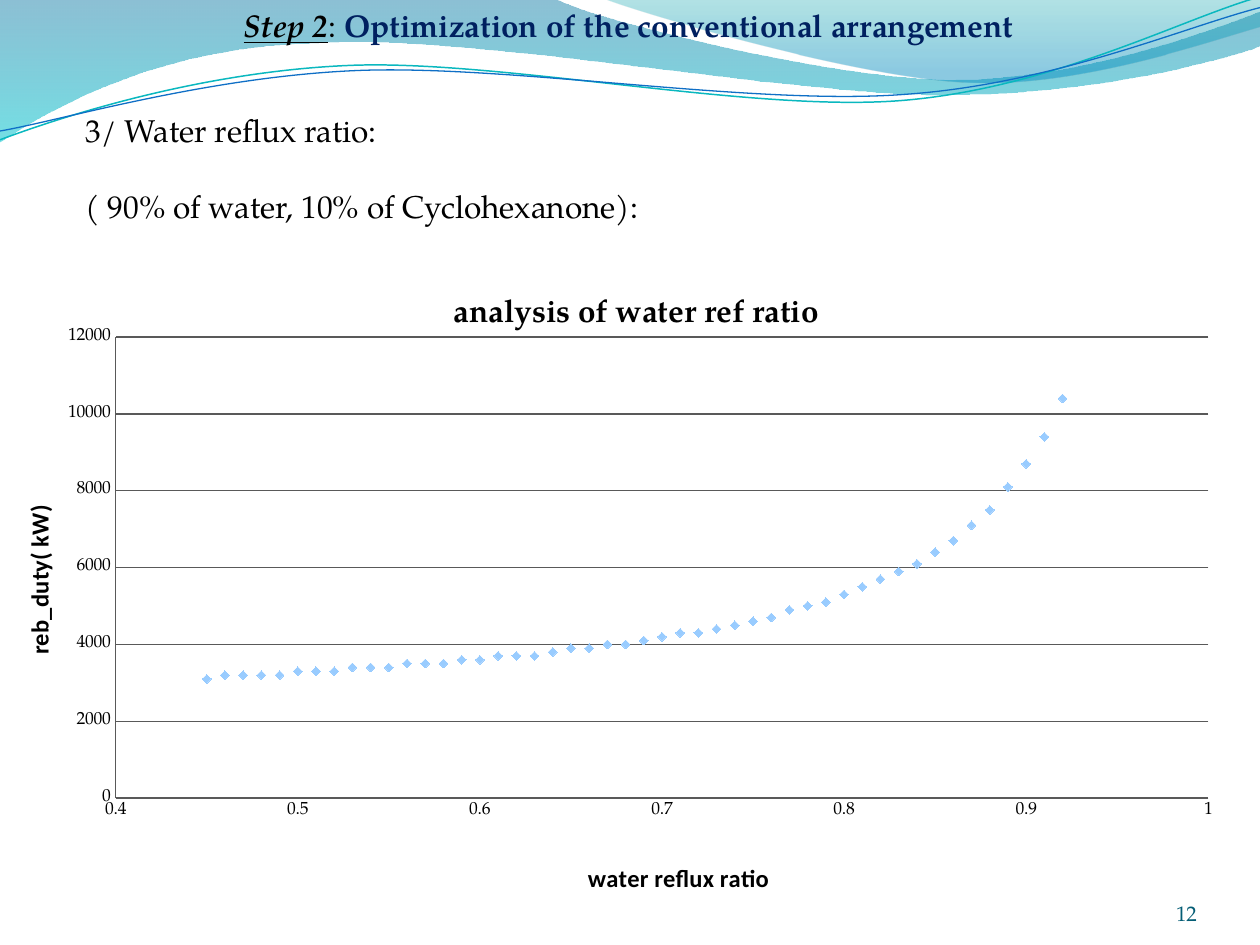
"""Build the water reflux ratio slide with its wave banner and scatter chart."""
from dataclasses import dataclass
from math import cos, radians, sin

from lxml import etree
from pptx import Presentation
from pptx.chart.data import XyChartData
from pptx.dml.color import RGBColor
from pptx.enum.chart import XL_CHART_TYPE, XL_MARKER_STYLE, XL_TICK_MARK
from pptx.enum.text import MSO_ANCHOR, PP_ALIGN
from pptx.oxml import parse_xml
from pptx.oxml.ns import nsdecls, qn
from pptx.util import Inches, Pt

SCATTER = XL_CHART_TYPE.XY_SCATTER
DIAMOND = XL_MARKER_STYLE.DIAMOND
NO_TICK = XL_TICK_MARK.NONE
TOP, BOTTOM = MSO_ANCHOR.TOP, MSO_ANCHOR.BOTTOM
LEFT, CENTER, RIGHT = PP_ALIGN.LEFT, PP_ALIGN.CENTER, PP_ALIGN.RIGHT

COLUMNS, ROWS = 10, 7.5
STRAND_TILT = -2.7


@dataclass(frozen=True)
class Theme:
    """Colours, fonts and type sizes."""
    serif: str = "TeX Gyre Pagella"
    sans: str = "Calibri"
    ink: str = "000000"
    navy: str = "002060"
    page: str = "045D75"
    teal: str = "0AB8BF"
    blue: str = "0F6FC6"
    marker: str = "99CCFF"
    grid: str = "595959"
    body: float = 18
    axis_title: float = 14
    number: float = 12
    tick: float = 10


BROAD_WAVE = [
    (0, 0), (4.4, -0.01),
    (4.76, 0.17, 6.64, 0.63, 7.58, 0.63), (8.53, 0.63, 9.58, 0.26, 10, 0.09),
    (10.01, 0.36),
    (9.83, 0.44, 8.7, 0.76, 7.46, 0.75), (6.22, 0.75, 3.82, 0.28, 2.57, 0.34),
    (1.29, 0.36, 0.46, 0.83, -0.01, 1.13), (0, 0)]
RIGHT_WAVE = [
    (4.79, -0.01), (5.09, 0.11, 6.82, 0.62, 7.69, 0.65),
    (8.56, 0.69, 9.61, 0.32, 10, 0.21), (10, 0), (4.79, -0.01)]
TEAL_STRAND = [
    (0, 1.11), (0.48, 0.93, 1.58, 0.57, 2.77, 0.52),
    (3.95, 0.47, 5.93, 0.89, 7.13, 0.8), (8.33, 0.71, 9.38, 0.15, 9.98, -0.02)]
BLUE_STRAND = [
    (0, 1.04), (0.47, 0.96, 1.64, 0.61, 2.83, 0.56),
    (4.03, 0.51, 5.97, 0.84, 7.17, 0.75), (8.36, 0.67, 9.41, 0.21, 10, 0.06)]

REBOILER_DUTY = [
    3100, 3200, 3200, 3200, 3200, 3300, 3300, 3300, 3400, 3400, 3400, 3500,
    3500, 3500, 3600, 3600, 3700, 3700, 3700, 3800, 3900, 3900, 4000, 4000,
    4100, 4200, 4300, 4300, 4400, 4500, 4600, 4700, 4900, 5000, 5100, 5300,
    5500, 5700, 5900, 6100, 6400, 6700, 7100, 7500, 8100, 8700, 9400, 10400]
FIRST_RATIO, RATIO_STEP = 0.45, 0.01


def layout(percents, inner=False):
    """Make a manual chart layout from percentages of the chart's size."""
    target = '<c:layoutTarget val="inner"/>' if inner else ""
    shares = "".join(f'<c:{tag} val="{percent / 100}"/>' for tag, percent in zip("xywh", percents))
    return parse_xml(f'<c:layout {nsdecls("c")}><c:manualLayout>{target}<c:xMode val="edge"/>'
                     f'<c:yMode val="edge"/>{shares}</c:manualLayout></c:layout>')


class SlideBuilder:
    """Holds the theme and the current slide."""

    def __init__(self, slide, theme, cell):
        """Keep the slide, its theme and the side of a grid cell."""
        self.slide, self.theme, self.cell = slide, theme, cell

    def place(self, *cells):
        """Convert grid cells to lengths."""
        return [round(value * self.cell) for value in cells]

    def style(self, font, size, color, family=None, bold=False, italic=False, underline=False):
        """Format one font."""
        font.name, font.size = family or self.theme.serif, Pt(size)
        font.bold, font.italic, font.underline = bold, italic, underline
        font.color.rgb = RGBColor.from_string(color)

    def outline(self, box, segments, closed, tilt=0):
        """Draw a freeform of lines and cubic curves in a tilted box."""
        left, top, width, height = box
        turn = radians(-tilt)

        def local(x, y):
            """Undo the tilt and measure from the corner of the box."""
            dx, dy = x - left - width / 2, y - top - height / 2
            return self.place(dx * cos(turn) - dy * sin(turn) + width / 2,
                              dx * sin(turn) + dy * cos(turn) + height / 2)

        pen = self.slide.shapes.build_freeform(0, 0, scale=1.0)
        pen.add_line_segments([self.place(width, height)], close=closed)
        shape = pen.convert_to_shape()
        shape.left, shape.top, shape.width, shape.height = self.place(*box)
        shape.rotation, shape.shadow.inherit = tilt, False
        route = next(shape._element.iter(qn("a:path")))
        for unused in list(route):
            route.remove(unused)
        for index, segment in enumerate(segments):
            verb = "a:moveTo" if not index else "a:lnTo" if len(segment) == 2 else "a:cubicBezTo"
            command = etree.SubElement(route, qn(verb))
            for x, y in zip(segment[::2], segment[1::2]):
                point = etree.SubElement(command, qn("a:pt"))
                for name, value in zip("xy", local(x, y)):
                    point.set(name, str(value))
        if closed:
            etree.SubElement(route, qn("a:close"))
        return shape

    def wave(self, box, segments, stops):
        """Draw a translucent band shaded from top to bottom."""
        shape = self.outline(box, segments, True)
        shape.line.fill.background()
        shape.fill.gradient()
        shape.fill.gradient_angle = 270
        for stop, (position, color, _) in zip(shape.fill.gradient_stops, stops):
            stop.position = position
            stop.color.rgb = RGBColor.from_string(color)
        colors = shape._element.spPr.iter(qn("a:srgbClr"))
        for color_element, (_, _, opacity) in zip(colors, stops):
            etree.SubElement(color_element, qn("a:alpha")).set("val", str(opacity * 1000))

    def strand(self, box, segments, color, width):
        """Draw a thin open curve."""
        shape = self.outline(box, segments, False, STRAND_TILT)
        shape.fill.background()
        shape.line.color.rgb = RGBColor.from_string(color)
        shape.line.width = Pt(width)

    def text(self, box, paragraphs, size, align=LEFT, anchor=TOP, inset=True, gap=0):
        """Add a text box of paragraphs made of (words, colour, format) runs."""
        frame = self.slide.shapes.add_textbox(*self.place(*box)).text_frame
        frame.word_wrap, frame.vertical_anchor = True, anchor
        if not inset:
            frame.margin_left = frame.margin_right = 0
            frame.margin_top = frame.margin_bottom = 0
        for index, runs in enumerate(paragraphs):
            paragraph = frame.add_paragraph() if index else frame.paragraphs[0]
            paragraph.alignment = align
            paragraph.space_before = Pt(gap if index else 0)
            for words, color, look in runs:
                run = paragraph.add_run()
                run.text = words
                self.style(run.font, size, color, **look)

    def axis(self, axis, words, corner, low, high, step):
        """Scale and style one chart axis."""
        theme = self.theme
        axis.minimum_scale, axis.maximum_scale, axis.major_unit = low, high, step
        axis.major_tick_mark = axis.minor_tick_mark = NO_TICK
        axis.has_major_gridlines = False
        axis.format.line.color.rgb = RGBColor.from_string(theme.grid)
        self.style(axis.tick_labels.font, theme.tick, theme.ink)
        axis.tick_labels.number_format = "General"
        axis.tick_labels.number_format_is_linked = False
        self.title(axis.axis_title, words, corner, theme.axis_title, theme.sans)

    def title(self, title, words, corner, size, family):
        """Write a bold chart or axis title at a corner given in percent."""
        title.text_frame.text = words
        self.style(title.text_frame.paragraphs[0].runs[0].font, size, self.theme.ink, family, True)
        element = title._element
        for old in element.findall(qn("c:layout")):
            element.remove(old)
        element.find(qn("c:tx")).addnext(layout(corner))

    def scatter(self, box, heading, x_axis, y_axis, points, plot_area):
        """Add a scatter chart of unjoined diamonds."""
        theme, data = self.theme, XyChartData()
        duty_series = data.add_series("Series 1")
        for x, y in points:
            duty_series.add_data_point(x, y)
        chart = self.slide.shapes.add_chart(SCATTER, *self.place(*box), data).chart
        self.style(chart.font, theme.tick, theme.ink)
        chart.has_legend = False
        self.title(chart.chart_title, *heading, theme.body, theme.serif)
        self.axis(chart.category_axis, *x_axis)
        self.axis(chart.value_axis, *y_axis)
        chart.value_axis.major_gridlines.format.line.color.rgb = RGBColor.from_string(theme.grid)
        chart.value_axis.has_major_gridlines = True
        chart.plots[0].vary_by_categories = False
        series = chart.plots[0].series[0]
        series.smooth = False
        series.format.line.fill.background()
        series.marker.style, series.marker.size = DIAMOND, 5
        series.marker.format.fill.solid()
        series.marker.format.fill.fore_color.rgb = RGBColor.from_string(theme.marker)
        series.marker.format.line.fill.background()
        area = next(chart._chartSpace.iter(qn("c:plotArea")))
        for old in area.findall(qn("c:layout")):
            area.remove(old)
        area.insert(0, layout(plot_area, inner=True))


def main():
    """Compose the slide and save it."""
    theme, deck = Theme(), Presentation()
    deck.slide_width, deck.slide_height = Inches(COLUMNS), Inches(ROWS)
    page = SlideBuilder(deck.slides.add_slide(deck.slide_layouts[6]), theme,
                        deck.slide_width / COLUMNS)
    page.wave((-0.01, -0.01, 10.02, 1.14), BROAD_WAVE, [(0, "0074A1", 45), (1, "00C6CF", 55)])
    page.wave((4.79, -0.01, 5.21, 0.7), RIGHT_WAVE, [(0, "00A1A9", 30), (0.8, "008BBF", 45)])
    page.strand((-0.02, 0.22, 10.02, 0.71), TEAL_STRAND, theme.teal, 0.85)
    page.strand((-0.02, 0.3, 10.03, 0.58), BLUE_STRAND, theme.blue, 0.75)
    page.text((8.67, 6.95, 0.83, 0.4), [[("12", theme.page, {})]],
              theme.number, RIGHT, BOTTOM, inset=False)
    points = [(round(FIRST_RATIO + RATIO_STEP * i, 2), duty)
              for i, duty in enumerate(REBOILER_DUTY)]
    page.scatter((0.02, 2.17, 9.98, 5), ("analysis of water ref ratio", (35.4, 2.8)),
                 ("water reflux ratio ", (46.2, 92.5), 0.4, 1, 0.1),
                 ("reb_duty( kW)", (1.2, 36), 0, 12000, 2000),
                 points, (9, 10.1, 86.9, 73.2))
    step_look = {"bold": True, "italic": True, "underline": True}
    page.text((-0.02, 0, 10.02, 0.4), [[
        ("Step 2", theme.ink, step_look), (": ", theme.ink, {}),
        ("Optimization of the conventional arrangement", theme.navy, {"bold": True})]],
        theme.body, CENTER)
    page.text((0.58, 0.83, 9.25, 1.62), [
        [("3/ Water reflux ratio:", theme.ink, {})],
        [("( 90% of water, 10% of Cyclohexanone):", theme.ink, {})]],
        theme.body, gap=22)
    deck.save("out.pptx")


if __name__ == "__main__":
    main()
